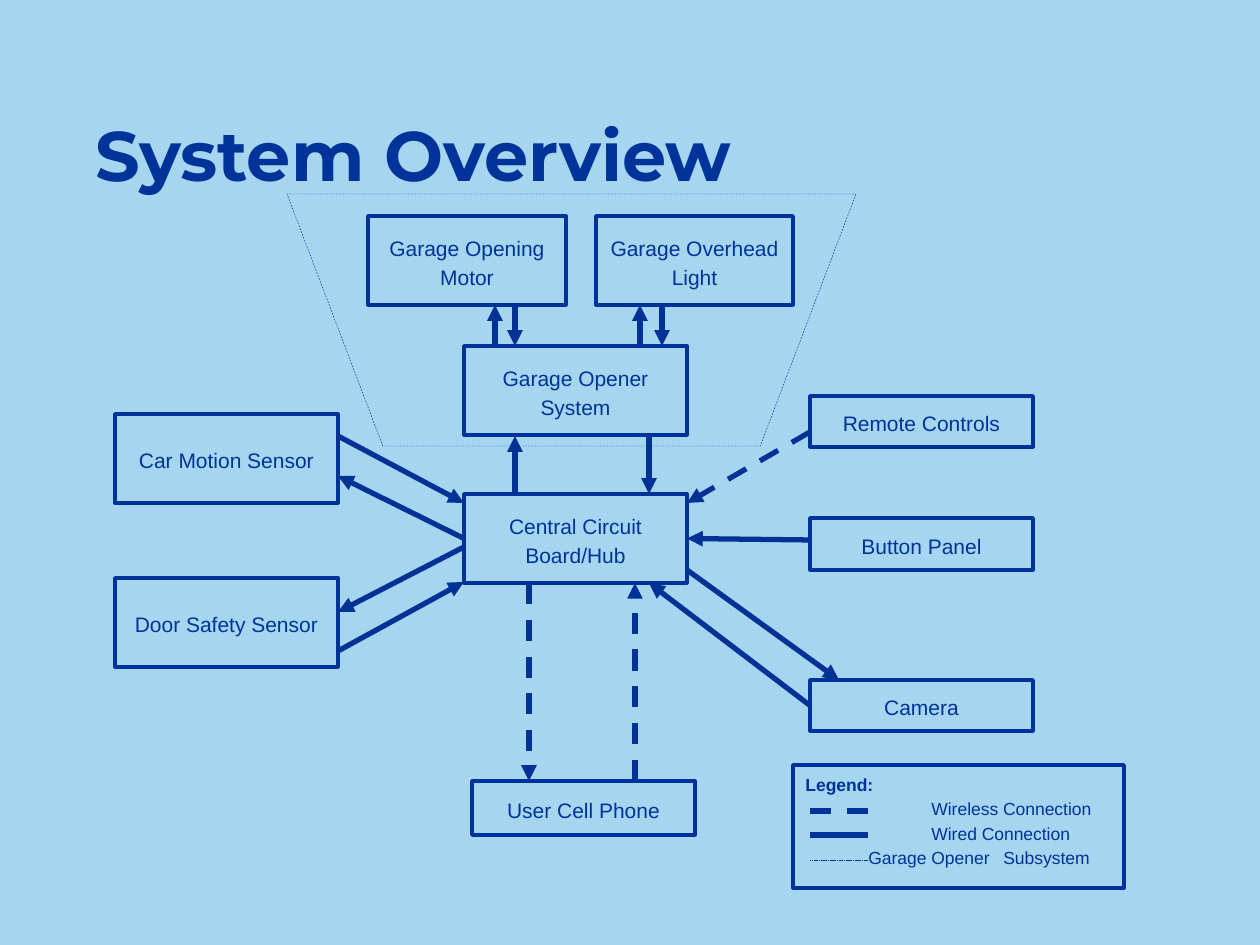
"""Build the garage system overview slide."""
from lxml.etree import SubElement
from pptx import Presentation
from pptx.dml.color import RGBColor
from pptx.enum.dml import MSO_LINE as DASH
from pptx.enum.shapes import MSO_CONNECTOR as CONN, MSO_SHAPE as SHAPE
from pptx.enum.text import MSO_ANCHOR as ANCHOR, PP_ALIGN as ALIGN
from pptx.oxml.ns import qn
from pptx.util import Emu, Pt

COLORS = {"sky": "A5D5EF", "navy": "003399", "arrow": "003296"}
TITLE = ("System Overview", (83, 63, 966, 180))
BOXES = {
    "Central Circuit Board/Hub": (464, 494, 223, 89),
    "Car Motion Sensor": (115, 414, 223, 89),
    "Door Safety Sensor": (115, 578, 223, 89),
    "User Cell Phone": (472, 781, 223, 54),
    "Garage Opener System": (464, 346, 223, 89),
    "Garage Opening Motor": (368, 216, 198, 89),
    "Garage Overhead Light": (596, 216, 197, 89),
    "Button Panel": (810, 518, 223, 52),
    "Camera": (810, 680, 223, 51),
    "Remote Controls": (810, 396, 223, 51),
}
SUBSYSTEM = (287, 194, 569, 252)
HUB = "Central Circuit Board/Hub"
WIRED = [
    ((338, 436), (464, 503)),
    ((HUB, 1), (338, 476)),
    ((338, 651), (464, 582)),
    ((464, 547), (338, 612)),
    ((515, 494), (515, 436)),
    ((649, 436), (649, 494)),
    ((495, 346), (495, 305)),
    ((515, 305), (515, 346)),
    ((640, 346), (640, 305)),
    ((662, 305), (662, 346)),
    ((810, 540), (HUB, 3)),
    ((687, 570), (839, 680)),
    (("Camera", 1), (649, 583)),
]
WIRELESS = [
    ((529, 583), (529, 781)),
    ((635, 781), (635, 583)),
    ((810, 432), (687, 503)),
]
LEGEND = (793, 765, 331, 123)
LEGEND_ROWS = [
    ("Legend:", []),
    ("\tWireless Connection", [126]),
    ("\tWired Connection", [126]),
    ("\tGarage Opener\tSubsystem", [63, 198]),
]
LEGEND_KEYS = [(811, 3, DASH.DASH), (835, 3, None), (860, 0.25, DASH.SQUARE_DOT)]


def px(n):
    return Emu(round(n * 914400 / 126))


def color(name):
    return RGBColor.from_string(COLORS[name])


def style_line(line, name, width, dash=None):
    line.color.rgb = color(name)
    line.width = Pt(width)
    if dash is not None:
        line.dash_style = dash


def add_outline(s, kind, place, width, dash=None):
    sp = s.shapes.add_shape(kind, *map(px, place))
    sp.shadow.inherit = False
    style_line(sp.line, "navy", width, dash)
    return sp


def add_panel(s, place):
    sp = add_outline(s, SHAPE.RECTANGLE, place, 2)
    sp.fill.solid()
    sp.fill.fore_color.rgb = color("sky")
    sp.text_frame.word_wrap = True
    return sp


def set_font(p, size, bold=False, name="Arial"):
    p.font.size, p.font.bold, p.font.name = Pt(size), bold, name
    p.font.color.rgb = color("navy")


def add_line(s, start, end, name, width, dash=None):
    points = [(0, 0) if isinstance(e[0], str) else e for e in (start, end)]
    c = s.shapes.add_connector(CONN.STRAIGHT, *(px(v) for pt in points for v in pt))
    for e, connect in ((start, c.begin_connect), (end, c.end_connect)):
        if isinstance(e[0], str):
            connect(boxes[e[0]], e[1])
    style_line(c.line, name, width, dash)
    SubElement(c._element.spPr, qn("a:effectLst"))
    return c


prs = Presentation()
prs.slide_width, prs.slide_height = px(1260), px(945)
s = prs.slides.add_slide(prs.slide_layouts[6])
s.background.fill.solid()
s.background.fill.fore_color.rgb = color("sky")

boxes = {}
for label, place in BOXES.items():
    boxes[label] = add_panel(s, place)
    tf = boxes[label].text_frame
    tf.vertical_anchor = ANCHOR.MIDDLE
    p = tf.paragraphs[0]
    p.text, p.alignment = label, ALIGN.CENTER
    p.line_spacing, p.space_after = 1.15, Pt(10)
    set_font(p, 12)

sp = add_outline(s, SHAPE.TRAPEZOID, SUBSYSTEM, 0.25, DASH.DASH)
sp.fill.background()
sp.rotation = 180
sp.adjustments[0] = 0.38

for arrows, dash in ((WIRED, None), (WIRELESS, DASH.DASH)):
    for start, end in arrows:
        c = add_line(s, start, end, "arrow", 3, dash)
        SubElement(c.line._get_or_add_ln(), qn("a:tailEnd"), type="triangle")

tf = add_panel(s, LEGEND).text_frame
tf.vertical_anchor = ANCHOR.TOP
for i, (text, stops) in enumerate(LEGEND_ROWS):
    p = tf.add_paragraph() if i else tf.paragraphs[0]
    p.text, p.alignment, p.line_spacing = text, ALIGN.LEFT, 1.15
    if stops:
        tabs = SubElement(p._p.get_or_add_pPr(), qn("a:tabLst"))
        for stop in stops:
            SubElement(tabs, qn("a:tab"), pos=str(px(stop)), algn="l")
    set_font(p, 10, bold=i == 0)
for y, width, dash in LEGEND_KEYS:
    add_line(s, (810, y), (868, y), "navy", width, dash)

text, place = TITLE
tf = s.shapes.add_textbox(*map(px, place)).text_frame
tf.word_wrap, tf.vertical_anchor = True, ANCHOR.MIDDLE
tf.text = text
set_font(tf.paragraphs[0], 40, True, "Montserrat")

prs.save("out.pptx")
